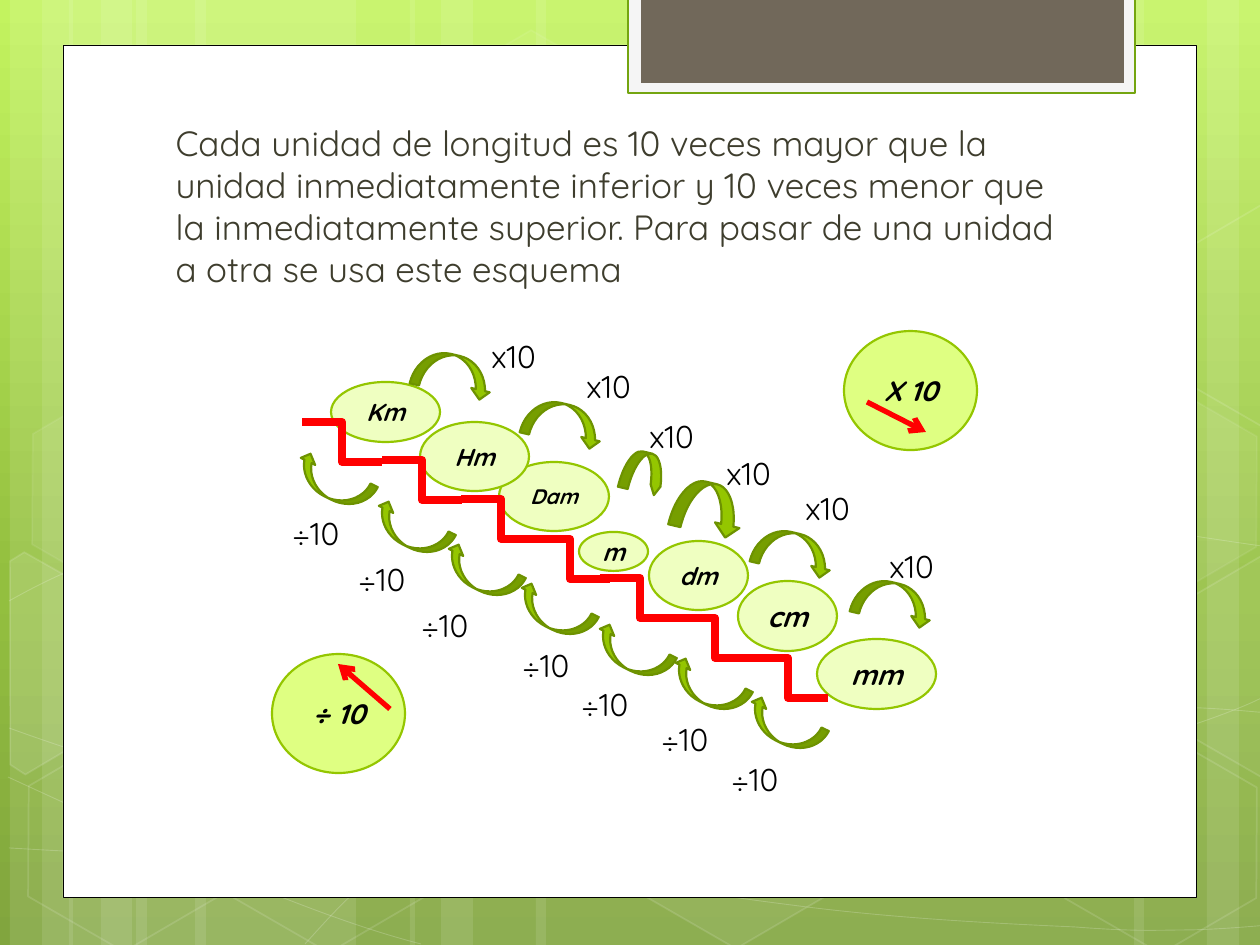
import copy
import math
from typing import NamedTuple

import pptx
import pptx.dml.color
import pptx.enum.shapes
import pptx.enum.text
import pptx.oxml
import pptx.oxml.ns
import pptx.util

EMU_PER_PX = 914400 / 126
RGB = pptx.dml.color.RGBColor
WHITE, BLACK, RED = RGB(255, 255, 255), RGB(0, 0, 0), RGB(255, 0, 0)
GREEN, DARK_GREEN = RGB(0x94, 0xC6, 0x00), RGB(0x6D, 0x92, 0x00)
PALE_GREEN, LIME = RGB(0xEF, 0xFF, 0xC1), RGB(0xDF, 0xFF, 0x82)
FRAME_GREY, FRAME_GREEN = RGB(0xF5, 0xF5, 0xF5), RGB(0x74, 0xA5, 0x10)
BROWN, TEXT_COLOR = RGB(0x71, 0x68, 0x5A), RGB(0x3E, 0x3D, 0x2D)
SKY = [(0, RGB(0xC3, 0xF3, 0x5F)), (0.62, RGB(0x93, 0xBF, 0x3F)), (1, RGB(0x81, 0xA5, 0x3E))]
KIND = pptx.enum.shapes.MSO_SHAPE
CONNECTOR = pptx.enum.shapes.MSO_CONNECTOR
ALIGN = pptx.enum.text.PP_ALIGN
FONT = "Quicksand"
BODY = ("Cada unidad de longitud es 10 veces mayor que la unidad inmediatamente inferior y 10 veces "
        "menor que la inmediatamente superior. Para pasar de una unidad a otra se usa este esquema")


class Box(NamedTuple):
    left: int
    top: int
    width: int
    height: int


class Hop(NamedTuple):
    """A curved arrow between two steps, and the box of its label."""
    arrow: Box
    label: Box
    adjustments: tuple[float, ...] = ()


COLUMNS = [(136, 220), (10, 63), (42, 105), (195, 220), (69, 63), (101, 105),
           (924, 220), (1207, 63), (1134, 105), (536, 388), (410, 63), (441, 105)]
# Each wave is a start point followed by three Bézier points per piece.
WAVES = [
    [(9, 848), (77, 852), (145, 856), (239, 854), (334, 853), (451, 851), (577, 838),
     (703, 825), (882, 801), (998, 777), (1113, 753), (1231, 716), (1269, 694)],
    [(9, 601), (45, 581), (82, 562), (152, 543), (224, 524), (326, 496), (437, 488),
     (549, 479), (685, 478), (824, 488), (963, 498), (1193, 537), (1269, 547)],
    [(8, 777), (160, 847), (311, 916), (421, 944)],
    [(9, 728), (48, 742), (88, 756), (161, 776), (234, 795), (344, 827), (450, 848),
     (554, 869), (687, 892), (791, 905), (896, 919), (1008, 924), (1075, 927),
     (1140, 932), (1158, 930), (1191, 930), (1223, 929), (1246, 927), (1269, 925)],
    [(305, 944), (328, 919), (350, 893), (381, 871), (411, 848), (454, 823), (489, 805),
     (524, 787), (546, 780), (592, 767), (638, 755), (722, 737), (766, 728),
     (811, 719), (818, 719), (857, 717), (896, 713), (958, 709), (1000, 708),
     (1045, 707), (1116, 708), (1116, 708), (1144, 708), (1173, 708), (1201, 708),
     (1223, 709), (1245, 711), (1256, 712), (1268, 713), (1264, 712), (1268, 713)],
]
# Left, top, fill opacity and line opacity of each hexagon.
HEXAGONS = [(421, 45, 4, 8), (626, 742, 6, 12), (14, 745, 0, 12), (18, 393, 7, 8),
            (219, 746, 0, 12), (949, 571, 10, 12), (1051, 747, 0, 12), (1051, 396, 7, 8)]
LEFT_CUT = [(10, 561), (24, 552), (121, 607), (120, 718), (25, 774), (10, 765)]
RIGHT_CUT = [(1167, 611), (1261, 556), (1271, 562), (1271, 772), (1263, 777), (1167, 722)]
CUT_HEXAGONS = [(LEFT_CUT, (45, 674), 10), (RIGHT_CUT, (1241, 655), 4),
                ([(x, y - 351) for x, y in RIGHT_CUT], (1241, 304), 0)]
UNITS = [("Km", 14, Box(331, 382, 109, 60)), ("Dam", 12, Box(499, 462, 110, 69)),
         ("Hm", 14, Box(420, 422, 109, 69)), ("m", 14, Box(579, 532, 69, 39)),
         ("dm", 14, Box(649, 541, 99, 69)), ("cm", 16, Box(738, 581, 99, 70)),
         ("mm", 16, Box(817, 639, 119, 70))]
STEPS = [(302, 422), (382, 460), (461, 499), (530, 539), (600, 578), (675, 618), (748, 658)]
HOPS_DOWN = [Hop(Box(413, 355, 81, 38), Box(479, 331, 101, 50)),
             Hop(Box(523, 404, 81, 38), Box(574, 361, 101, 50)),
             Hop(Box(622, 452, 42, 40), Box(637, 411, 101, 50), (0.25, 0.26, 0.25)),
             Hop(Box(673, 483, 71, 50), Box(714, 448, 79, 50)),
             Hop(Box(753, 533, 81, 38), Box(793, 483, 101, 50)),
             Hop(Box(853, 583, 81, 38), Box(877, 541, 101, 50))]
HOPS_UP = [Hop(Box(*arrow, 83, 32), Box(*label, 105, 50)) for arrow, label in [
    ((292, 467), (280, 508)), ((370, 515), (346, 554)), ((440, 558), (409, 600)),
    ((513, 597), (510, 640)), ((591, 638), (569, 679)), ((667, 672), (649, 714)),
    ((743, 711), (719, 754))]]


def px(length: float) -> int:
    return round(length * EMU_PER_PX)


def make_element(tag: str, **attributes: str):
    element = pptx.oxml.parse_xml(f"<a:{tag} {pptx.oxml.ns.nsdecls('a')}/>")
    for name, value in attributes.items():
        element.set(name, value)
    return element


def paint(shape, fill=None, line=None, width=1.25, fill_alpha=100, line_alpha=100) -> None:
    """Set fill and outline; None leaves either one out."""
    shape.shadow.inherit = False
    for target, parent, color, alpha in (
            (shape.fill, shape._element.spPr, fill, fill_alpha),
            (shape.line.fill, shape.line._ln, line, line_alpha)):
        if color is None:
            target.background()
            continue
        target.solid()
        target.fore_color.rgb = color
        if alpha < 100:
            solid = parent.find(pptx.oxml.ns.qn("a:solidFill"))
            solid[0].append(make_element("alpha", val=str(alpha * 1000)))
    if line is not None:
        shape.line.width = pptx.util.Pt(width)


def add_shape(shapes, kind, box: Box, **style):
    shape = shapes.add_shape(kind, *map(px, box))
    paint(shape, **style)
    return shape


def write_text(shape, text: str, *, size: int, color=BLACK, emphasis=False,
               align=ALIGN.LEFT, wrap=True):
    shape.text_frame.word_wrap = wrap
    paragraph = shape.text_frame.paragraphs[0]
    paragraph.alignment = align
    run = paragraph.add_run()
    run.text = text
    run.font.name, run.font.size = FONT, pptx.util.Pt(size)
    run.font.bold = run.font.italic = emphasis
    run.font.color.rgb = color
    return paragraph


def add_ellipse(shapes, text: str, size: int, box: Box, fill) -> None:
    ellipse = add_shape(shapes, KIND.OVAL, box, fill=fill, line=GREEN)
    ellipse.text_frame.vertical_anchor = pptx.enum.text.MSO_ANCHOR.MIDDLE
    write_text(ellipse, text, size=size, emphasis=True, align=ALIGN.CENTER, wrap=False)


def add_red_line(shapes, kind, start, end, width: float, arrow=False) -> None:
    connector = shapes.add_connector(kind, *map(px, (*start, *end)))
    connector.line.color.rgb = RED
    connector.line.width = pptx.util.Pt(width)
    if arrow:
        connector.line._ln.append(make_element("tailEnd", type="arrow"))
    connector._element.spPr.append(make_element("effectLst"))


def add_hop(shapes, hop: Hop, text: str, rotation: float) -> None:
    arrow = add_shape(shapes, KIND.CURVED_UP_ARROW, hop.arrow, fill=GREEN, line=DARK_GREEN)
    arrow.rotation = rotation
    arrow._element.spPr.xfrm.set("flipH", "1")
    for index, value in enumerate(hop.adjustments):
        arrow.adjustments[index] = value
    write_text(shapes.add_textbox(*map(px, hop.label)), text, size=18)


def add_outline(shapes, points, closed: bool, **style):
    builder = shapes.build_freeform(*points[0], scale=EMU_PER_PX)
    builder.add_line_segments(points[1:], close=closed)
    shape = builder.convert_to_shape()
    paint(shape, line=WHITE, **style)
    return shape


def add_wave(shapes, points) -> None:
    """Join every three points after the first into one Bézier piece."""
    shape = add_outline(shapes, points, False, width=0.5, line_alpha=20)
    lines = list(shape._element.iter(pptx.oxml.ns.qn("a:lnTo")))
    for first in range(0, len(lines), 3):
        curve = make_element("cubicBezTo")
        lines[first].addprevious(curve)
        for line in lines[first:first + 3]:
            curve.append(line[0])
            line.getparent().remove(line)


def turn_back(point, center, degrees: float):
    x, y = point[0] - center[0], point[1] - center[1]
    cosine, sine = math.cos(math.radians(degrees)), math.sin(math.radians(degrees))
    return center[0] + x * cosine + y * sine, center[1] + y * cosine - x * sine


def draw_backdrop(slide) -> None:
    fill, shapes = slide.background.fill, slide.shapes
    fill.gradient()
    fill.gradient_angle = 270
    last_stop = slide.background._cSld.findall(".//" + pptx.oxml.ns.qn("a:gs"))[-1]
    last_stop.addnext(copy.deepcopy(last_stop))
    for stop, (position, color) in zip(fill.gradient_stops, SKY):
        stop.position, stop.color.rgb = position, color
    for left, width in COLUMNS:
        add_shape(shapes, KIND.RECTANGLE, Box(left, 0, width, 945), fill=WHITE, fill_alpha=10)
    for wave in WAVES:
        add_wave(shapes, wave)
    for left, top, alpha, line_alpha in HEXAGONS:
        hexagon = add_shape(shapes, KIND.HEXAGON, Box(left, top, 220, 192), line=WHITE, width=1,
                            fill=WHITE if alpha else None, fill_alpha=alpha, line_alpha=line_alpha)
        hexagon.adjustments[0], hexagon.rotation = 0.285, 30
    for points, center, alpha in CUT_HEXAGONS:
        upright = [turn_back(point, center, 30) for point in points]
        add_outline(shapes, upright, True, fill=WHITE if alpha else None, fill_alpha=alpha,
                    width=1, line_alpha=12).rotation = 30
    add_shape(shapes, KIND.RECTANGLE, Box(63, 45, 1134, 853), fill=WHITE, line=BLACK, width=0.5)
    add_shape(shapes, KIND.RECTANGLE, Box(628, -2, 507, 95), fill=FRAME_GREY, line=FRAME_GREEN)
    add_shape(shapes, KIND.RECTANGLE, Box(641, -2, 483, 85), fill=BROWN)


def write_body(slide) -> None:
    body = slide.placeholders[1]
    body.left, body.top, body.width, body.height = map(px, Box(154, 115, 934, 536))
    paragraph = write_text(body, BODY, size=20, color=TEXT_COLOR)
    paragraph.space_before = pptx.util.Pt(4)
    properties = paragraph._p.get_or_add_pPr()
    properties.set("marL", str(px(9)))
    properties.set("indent", "0")
    properties.append(make_element("buNone"))
    slide.shapes._spTree.append(body._element)


def draw_staircase(shapes) -> None:
    for name, size, box in UNITS:
        add_ellipse(shapes, name, size, box, PALE_GREEN)
    for x, y in STEPS:
        add_red_line(shapes, CONNECTOR.ELBOW, (x, y), (x + 80, y + 40), 4.5)
    for hops, text, rotation in ((HOPS_DOWN, "x10", 193.2), (HOPS_UP, "÷10", 26.4)):
        for hop in hops:
            add_hop(shapes, hop, text, rotation)
    for text, corner, start, end in (("X 10", (844, 331), (867, 402), (926, 432)),
                                     ("÷ 10", (272, 654), (390, 709), (338, 664))):
        add_ellipse(shapes, text, 16, Box(*corner, 133, 119), LIME)
        add_red_line(shapes, CONNECTOR.STRAIGHT, start, end, 3, arrow=True)


presentation = pptx.Presentation()
presentation.slide_width, presentation.slide_height = px(1260), px(945)
slide = presentation.slides.add_slide(presentation.slide_layouts[1])
title = slide.shapes.title._element
title.getparent().remove(title)
draw_backdrop(slide)
write_body(slide)
draw_staircase(slide.shapes)
presentation.save("out.pptx")
